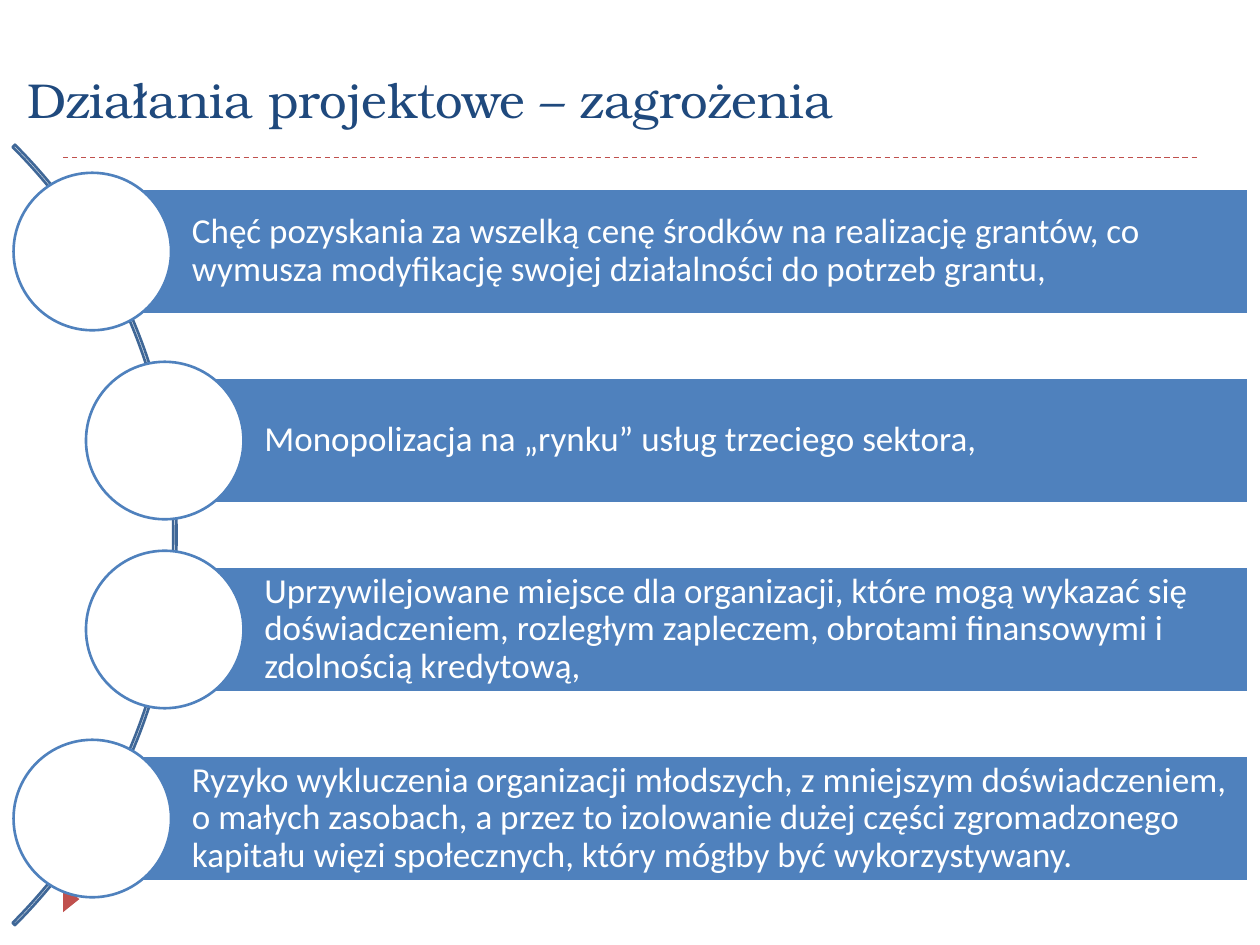
from lxml.etree import SubElement
from pptx import Presentation
from pptx.dml.color import RGBColor
from pptx.enum.dml import MSO_LINE
from pptx.enum.shapes import MSO_CONNECTOR, MSO_SHAPE as Kind
from pptx.enum.text import MSO_ANCHOR as Anchor, PP_ALIGN as Align
from pptx.oxml.ns import qn
from pptx.util import Cm, Pt

COLORS = {
    "title": "1F497D",
    "accent": "C0504D",
    "bar": "4F81BD",
    "arc": "3F6797",
    "white": "FFFFFF",
}
RISKS = [
    "Chęć pozyskania za wszelką cenę środków na realizację grantów, "
    "co wymusza modyfikację swojej działalności do potrzeb grantu,",
    "Monopolizacja na „rynku” usług trzeciego sektora,",
    "Uprzywilejowane miejsce dla organizacji, które mogą wykazać się "
    "doświadczeniem, rozległym zapleczem, obrotami finansowymi i "
    "zdolnością kredytową,",
    "Ryzyko wykluczenia organizacji młodszych, z mniejszym doświadczeniem, "
    "o małych zasobach, a przez to izolowanie dużej części zgromadzonego "
    "kapitału więzi społecznych, który mógłby być wykorzystywany.",
]


def color(name):
    return RGBColor.from_string(COLORS[name])


def add_form(slide, kind, box, fill=None, line=None):
    """Add a flat preset shape; box is left, top, width, height in cm."""
    form = slide.shapes.add_shape(kind, *map(Cm, box))
    form.shadow.inherit = False
    if fill:
        form.fill.solid()
        form.fill.fore_color.rgb = color(fill)
    else:
        form.fill.background()
    if line:
        form.line.color.rgb = color(line)
        form.line.width = Pt(1.5)
    else:
        form.line.fill.background()
    return form


def set_text(form, text, font, size, tint, anchor):
    frame = form.text_frame
    frame.word_wrap = True
    frame.vertical_anchor = anchor
    par = frame.paragraphs[0]
    par.text = text
    par.alignment = Align.LEFT
    par.font.name = font
    par.font.size = Pt(size)
    par.font.color.rgb = color(tint)
    return frame


def add_decor(slide, left, top, width, height):
    """Dashed rule along the top, triangle marker at the bottom left."""
    rule = slide.shapes.add_connector(
        MSO_CONNECTOR.STRAIGHT, Cm(left), Cm(top), Cm(left + width), Cm(top))
    rule.line.color.rgb = color("accent")
    rule.line.width = Pt(0.75)
    rule.line.dash_style = MSO_LINE.DASH
    SubElement(rule._element.spPr, qn("a:effectLst"))
    mark = add_form(slide, Kind.ISOSCELES_TRIANGLE,
                    (left - 0.1, top + height, 0.53, 0.33), "accent")
    mark.rotation = 90


def add_title(slide, *box):
    form = slide.shapes.add_textbox(*map(Cm, box))
    set_text(form, "Działania projektowe – zagrożenia",
             "TeX Gyre Bonum", 28, "title", Anchor.BOTTOM)


def add_risk(slide, text, left, top, width, height):
    """Bar with its text, and a circle centred on the left edge."""
    bar = add_form(slide, Kind.RECTANGLE, (left, top, width, height),
                   "bar", "white")
    frame = set_text(bar, text, "Calibri", 20, "white", Anchor.MIDDLE)
    frame.margin_left = Cm(2.01)
    frame.margin_right = frame.margin_top = frame.margin_bottom = Cm(0.15)
    frame.paragraphs[0].line_spacing = 0.9
    size = height * 1.25
    add_form(slide, Kind.OVAL,
             (left - size / 2, top + (height - size) / 2, size, size),
             "white", "bar")


def add_list(slide, left, top, width, height):
    """Risks stacked along an arc; the middle ones are indented."""
    size = 22.25
    arc = add_form(slide, Kind.BLOCK_ARC,
                   (left - 20.55, top + (height - size) / 2, size, size),
                   line="arc")
    for i, value in enumerate((189, 27, 0.003)):
        arc.adjustments[i] = value
    bar = 2.54
    step = (height - bar) / (len(RISKS) - 1)
    for i, text in enumerate(RISKS):
        indent = 0 if i in (0, len(RISKS) - 1) else 1.46
        add_risk(slide, text, left + indent, top + i * step,
                 width - indent, bar)


def main():
    deck = Presentation()
    deck.slide_width, deck.slide_height = Cm(25.4), Cm(19.05)
    slide = deck.slides.add_slide(deck.slide_layouts[6])
    add_decor(slide, 1.27, 3.18, 22.86, 14.78)
    add_title(slide, 0.3, 0.33, 24.79, 2.39)
    add_list(slide, 1.86, 3.8, 23.31, 13.97)
    deck.save("out.pptx")


if __name__ == "__main__":
    main()
